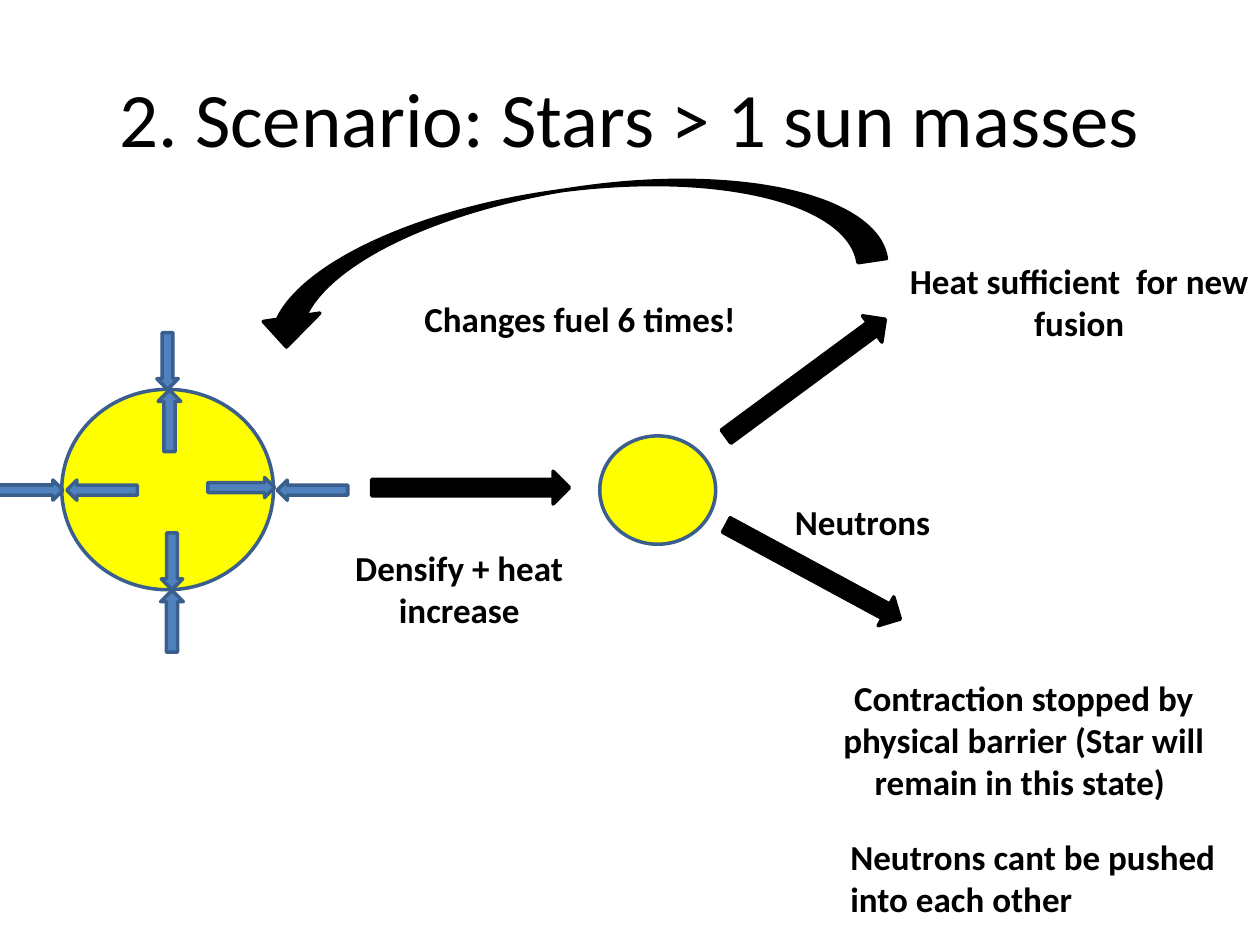
from dataclasses import dataclass

from lxml.etree import SubElement
from pptx import Presentation
from pptx.dml.color import RGBColor
from pptx.enum.shapes import MSO_SHAPE as Shape
from pptx.enum.text import MSO_ANCHOR as Anchor, MSO_AUTO_SIZE as AutoSize, PP_ALIGN as Align
from pptx.util import Inches, Pt


@dataclass(frozen=True)
class Theme:
    """Colours, type and the size of one grid cell."""
    font: str = "Calibri"
    title_size: int = 44
    label_size: int = 20
    line_width: int = 2
    ink: str = "000000"
    star: str = "FFFF00"
    force: str = "4F81BD"
    outline: str = "3A5F8C"
    cell: float = 0.1


@dataclass(frozen=True)
class Box:
    """A rectangle in columns and rows of the 100 by 75 grid."""
    left: float
    top: float
    width: float
    height: float

    def inner(self, left, top, width, height):
        """Return a box placed relative to this one."""
        return Box(self.left + left, self.top + top, width, height)

    def centred(self, across, down, width, height):
        """Return a box whose middle is offset from the middle of this one."""
        return self.inner((self.width - width) / 2 + across,
                          (self.height - height) / 2 + down, width, height)

    def lengths(self):
        """Return the place and size as slide lengths."""
        return [Inches(THEME.cell * cells)
                for cells in (self.left, self.top, self.width, self.height)]


THEME = Theme()


def add_text(page, box, words, align=Align.CENTER, size=THEME.label_size, bold=True):
    """Add a wrapped text box with one paragraph."""
    text_box = page.shapes.add_textbox(*box.lengths())
    frame = text_box.text_frame
    frame.word_wrap = True
    frame.auto_size = AutoSize.SHAPE_TO_FIT_TEXT if bold else AutoSize.NONE
    frame.vertical_anchor = Anchor.TOP if bold else Anchor.MIDDLE
    para = frame.paragraphs[0]
    para.text = words
    para.alignment = align
    para.font.name = THEME.font
    para.font.size = Pt(size)
    para.font.bold = bold
    para.font.color.rgb = RGBColor.from_string(THEME.ink)


def add_figure(page, box, kind, fill, outline, angle=0):
    """Add a filled and outlined preset shape."""
    figure = page.shapes.add_shape(kind, *box.lengths())
    figure.shadow.inherit = False
    figure.fill.solid()
    figure.fill.fore_color.rgb = RGBColor.from_string(fill)
    figure.line.color.rgb = RGBColor.from_string(outline)
    figure.line.width = Pt(THEME.line_width)
    figure.rotation = angle


def add_star(page, box):
    """Add a yellow star."""
    add_figure(page, box, Shape.OVAL, THEME.star, THEME.outline)


def add_step(page, box, angle=0):
    """Add a black arrow between two stages."""
    add_figure(page, box, Shape.RIGHT_ARROW, THEME.ink, THEME.ink, angle)


def balanced_star(page, box):
    """Draw the star with its inward and outward forces."""
    add_star(page, box)
    forces = [
        (5.85, -0.15, 5.3, 1.6, 0), (0, -10.2, 4.5, 1.7, 90),
        (11.5, 0.05, 5.6, 1.6, 180), (-10.95, 0.05, 5.3, 1.6, 0),
        (0.35, 5.7, 4.5, 1.7, 90), (-5.2, 0.05, 5.6, 1.6, 180),
        (0.15, -5.45, 4.9, 1.8, 270), (0.35, 10.45, 4.9, 1.8, 270),
    ]
    for across, down, length, thickness, angle in forces:
        add_figure(page, box.centred(across, down, length, thickness),
                   Shape.RIGHT_ARROW, THEME.force, THEME.outline, angle)


def collapse(page, box):
    """Draw the step to the denser star."""
    add_step(page, box.inner(5.9, 2.8, 15.7, 2.6))
    add_star(page, box.inner(24, 0, 9.2, 8.6))
    add_text(page, box.inner(0, 8.3, 25.7, 7.7), "Densify + heat increase")


def new_fusion(page, box):
    """Draw the branch that returns to the first star."""
    add_step(page, box.inner(23.4, 10.5, 15.7, 2.6), 323.6)
    add_text(page, box.inner(38, 1.9, 29.9, 7.7), "Heat sufficient  for new fusion")
    add_figure(page, box.inner(7.5, -23.7, 9.1, 50.4),
               Shape.CURVED_RIGHT_ARROW, THEME.ink, THEME.ink, 81.6)
    add_text(page, box.inner(0, 4.9, 26.8, 4.4), "Changes fuel 6 times!", Align.LEFT)


def neutron_barrier(page, box):
    """Draw the branch that ends at the neutron barrier."""
    add_step(page, box.inner(0, 4.9, 15.7, 2.6), 28.4)
    add_text(page, box.inner(7.8, 14, 33.5, 11.1),
             "Contraction stopped by physical barrier (Star will remain in this state) ")
    add_text(page, box.inner(5.4, 0, 19.2, 4.4), "Neutrons", Align.LEFT)
    add_text(page, box.inner(9.8, 26.6, 33.5, 7.7),
             "Neutrons cant be pushed into each other", Align.LEFT)


def main():
    """Build and save the slide."""
    deck = Presentation()
    deck.slide_width, deck.slide_height = Box(0, 0, 100, 75).lengths()[2:]
    page = deck.slides.add_slide(deck.slide_layouts[6])
    add_text(page, Box(5, 3, 90, 12.5), "2. Scenario: Stars > 1 sun masses",
             size=THEME.title_size, bold=False)
    balanced_star(page, Box(4.9, 30.9, 16.8, 15.9))
    collapse(page, Box(23.6, 34.6, 33.2, 16))
    new_fusion(page, Box(32.7, 18.2, 67.9, 13))
    neutron_barrier(page, Box(56.7, 39.2, 43.3, 34.3))
    deck.save("out.pptx")


if __name__ == "__main__":
    main()
